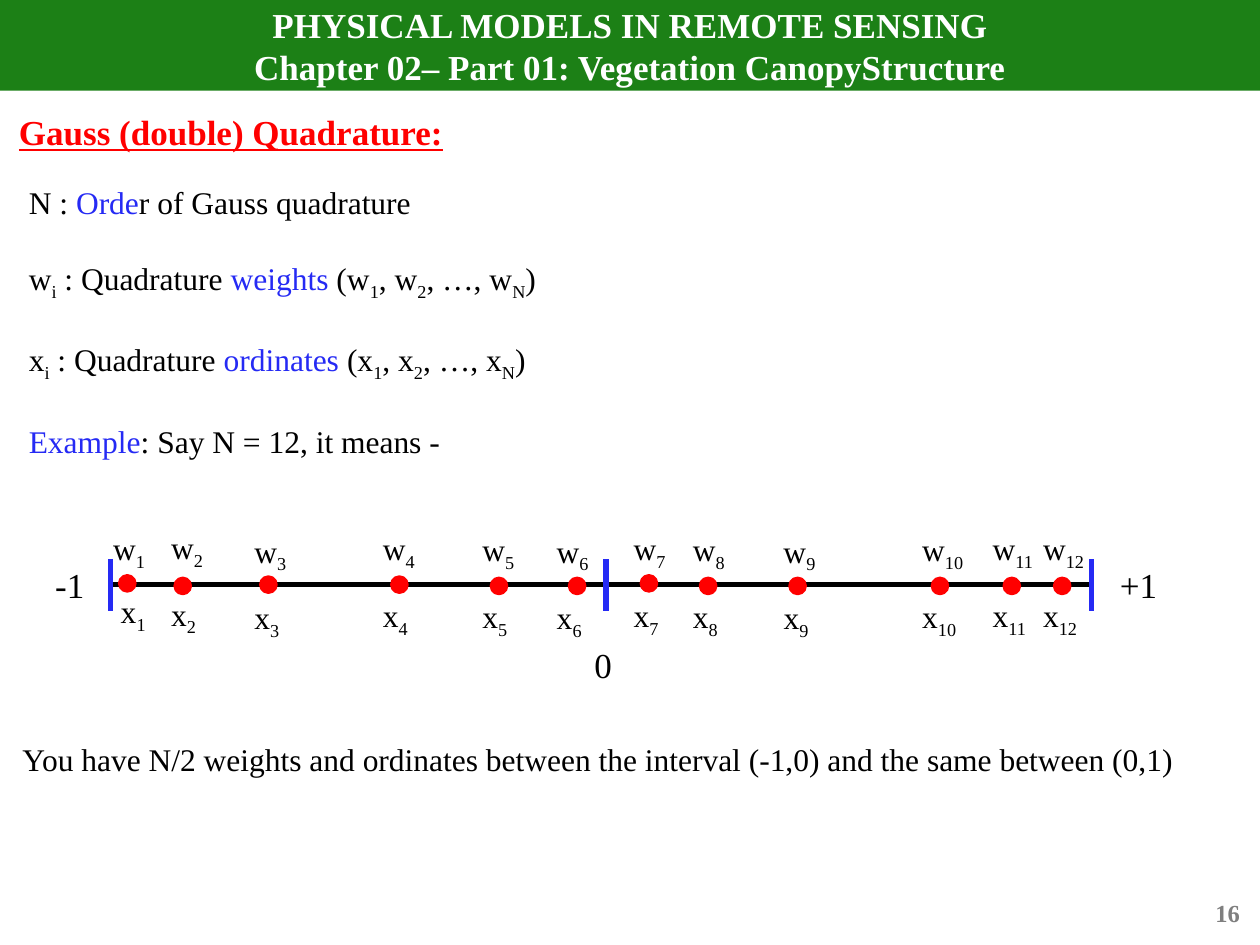
from pptx import Presentation
from pptx.dml.color import RGBColor
from pptx.enum.shapes import MSO_CONNECTOR as CONN, MSO_SHAPE as SHAPE
from pptx.enum.text import MSO_ANCHOR as ANCHOR, PP_ALIGN as ALIGN
from pptx.oxml.ns import qn
from pptx.util import Inches, Pt
from lxml.etree import SubElement

GREEN = RGBColor(0x1C, 0x80, 0x16)
RED = RGBColor(0xFF, 0x00, 0x00)
BLUE = RGBColor(0x25, 0x2A, 0xF4)
BLACK = RGBColor(0x00, 0x00, 0x00)
WHITE = RGBColor(0xFF, 0xFF, 0xFF)
GRAY = RGBColor(0x7F, 0x7F, 0x7F)

COLS, ROWS = 100, 75
CELL = Inches(10) // COLS

HEADER = ["PHYSICAL MODELS IN REMOTE SENSING",
          "Chapter 02– Part 01: Vegetation CanopyStructure"]


def series(symbol, name):
    return [(symbol, ""), ("i", "sub"), (" : Quadrature ", ""), (name, "key"),
            (f" ({symbol}", ""), ("1", "sub"), (f", {symbol}", ""), ("2", "sub"),
            (f", …, {symbol}", ""), ("N", "sub"), (")", "")]


DEFINITIONS = [
    [("N : ", ""), ("Orde", "key"), ("r of Gauss quadrature", "")],
    series("w", "weights"),
    series("x", "ordinates"),
    [("Example", "key"), (": Say N = 12, it means -", "")],
]

# dot column, dot row, label column, label row
NODES = [
    (0.7, 4.3, -0.8, 0.1), (5.1, 4.5, 3.8, 0), (11.9, 4.4, 10.4, 0.3),
    (22.3, 4.4, 20.6, 0.1), (30.2, 4.5, 28.5, 0.2), (36.4, 4.5, 34.4, 0.3),
    (42.1, 4.3, 40.5, 0.1), (46.8, 4.5, 45.2, 0.2), (53.9, 4.5, 52.4, 0.3),
    (65.2, 4.5, 63.4, 0.2), (70.9, 4.5, 69, 0.1), (74.9, 4.5, 73, 0.1),
]


def grid(*cells):
    return [round(c * CELL) for c in cells]


def add_run(p, text, kind="", **style):
    r = p.add_run()
    r.text = text
    font = {"name": "Times New Roman", "size": Pt(18), **style}
    for key, value in font.items():
        if key != "color":
            setattr(r.font, key, value)
    r.font.color.rgb = BLUE if kind == "key" else style.get("color", BLACK)
    if kind == "sub":
        r.font._element.set("baseline", "-25000")


def add_text(s, box, paragraphs, gap=0, wrap=True, align=None, frame=None, **style):
    tf = s.shapes.add_textbox(*grid(*box)).text_frame
    for key, value in {"word_wrap": wrap, **(frame or {})}.items():
        setattr(tf, key, value)
    for i, parts in enumerate(paragraphs):
        p = tf.paragraphs[0] if i == 0 else tf.add_paragraph()
        p.alignment = align
        if i and gap:
            p.space_before = Pt(gap)
        for text, kind in parts:
            add_run(p, text, kind, **style)


def add_shape(s, kind, box, color, outline=None):
    sp = s.shapes.add_shape(kind, *grid(*box))
    sp.shadow.inherit = False
    sp.fill.solid()
    sp.fill.fore_color.rgb = color
    if outline:
        sp.line.color.rgb = color
        sp.line.width = Pt(outline)
    else:
        sp.line.fill.background()
    return sp


def add_line(s, ends, color):
    line = s.shapes.add_connector(CONN.STRAIGHT, *grid(*ends))
    line.line.color.rgb = color
    line.line.width = Pt(3)
    SubElement(line._element.spPr, qn("a:effectLst"))


def margins(size=0):
    return {f"margin_{side}": size for side in ("left", "top", "right", "bottom")}


def header(s, box):
    tf = add_shape(s, SHAPE.RECTANGLE, box, GREEN).text_frame
    for key, value in {**margins(), "vertical_anchor": ANCHOR.MIDDLE,
                       "word_wrap": True}.items():
        setattr(tf, key, value)
    p = tf.paragraphs[0]
    p.alignment = ALIGN.CENTER
    for i, text in enumerate(HEADER):
        if i:
            p.add_line_break()
        add_run(p, text, size=Pt(20), bold=True, color=WHITE)


def definitions(s, box):
    left, top, width, height = box
    add_text(s, (left + 0.2, top, width, 3.4), [[("Gauss (double) Quadrature:", "")]],
             frame=margins(), size=Pt(20), bold=True, underline=True, color=RED)
    add_text(s, (left, top + 5.2, width, height - 5.2), DEFINITIONS, gap=22)


def number_line(s, box):
    left, top, width, height = box
    middle = left + 39.3
    right = left + width
    axis = top + 5

    add_line(s, (left, axis, right, axis), BLACK)
    for x in (left, middle, right):
        add_line(s, (x, axis - 2, x, axis + 2.1), BLUE)

    for text, x, y, w in (("-1", left - 5.4, axis - 2.2, 4.3),
                          ("+1", right + 1.3, axis - 2.2, 5),
                          ("0", middle - 1.9, top + height - 4.4, 3.4)):
        add_text(s, (x, y, w, 4.4), [[(text, "")]], wrap=False, size=Pt(20))

    for i, (dot_x, dot_y, label_x, label_y) in enumerate(NODES, 1):
        add_shape(s, SHAPE.OVAL, (left + dot_x, top + dot_y, 1.2, 1.2), RED, 2)
        extra = 0.8 if i > 9 else 0
        shift, drop = (0.6, 5) if i == 1 else (0, 5.3)
        for symbol, dx, dy, w in (("w", 0, 0, 4.7), ("x", shift, drop, 4.1)):
            add_text(s, (left + label_x + dx, top + label_y + dy, w + extra, 4),
                     [[(symbol, ""), (str(i), "sub")]], wrap=False)


def conclusion(s, box):
    add_text(s, box, [[("You have N/2 weights and ordinates between the interval "
                        "(-1,0) and the same between (0,1)", "")]])


def page_number(s, box):
    add_text(s, box, [[("16", "")]], align=ALIGN.RIGHT,
             frame={"vertical_anchor": ANCHOR.MIDDLE},
             size=Pt(14), bold=True, color=GRAY)


def main():
    prs = Presentation()
    prs.slide_width, prs.slide_height = grid(COLS, ROWS)
    s = prs.slides.add_slide(prs.slide_layouts[6])
    header(s, (0, 0, COLS, 7.2))
    definitions(s, (1.3, 8.8, 95.8, 27.4))
    number_line(s, (8.8, 41.4, 77.8, 13.6))
    conclusion(s, (0.8, 58.2, 95.8, 7.1))
    page_number(s, (76.1, 70.4, 23.3, 4))
    prs.save("out.pptx")


if __name__ == "__main__":
    main()
